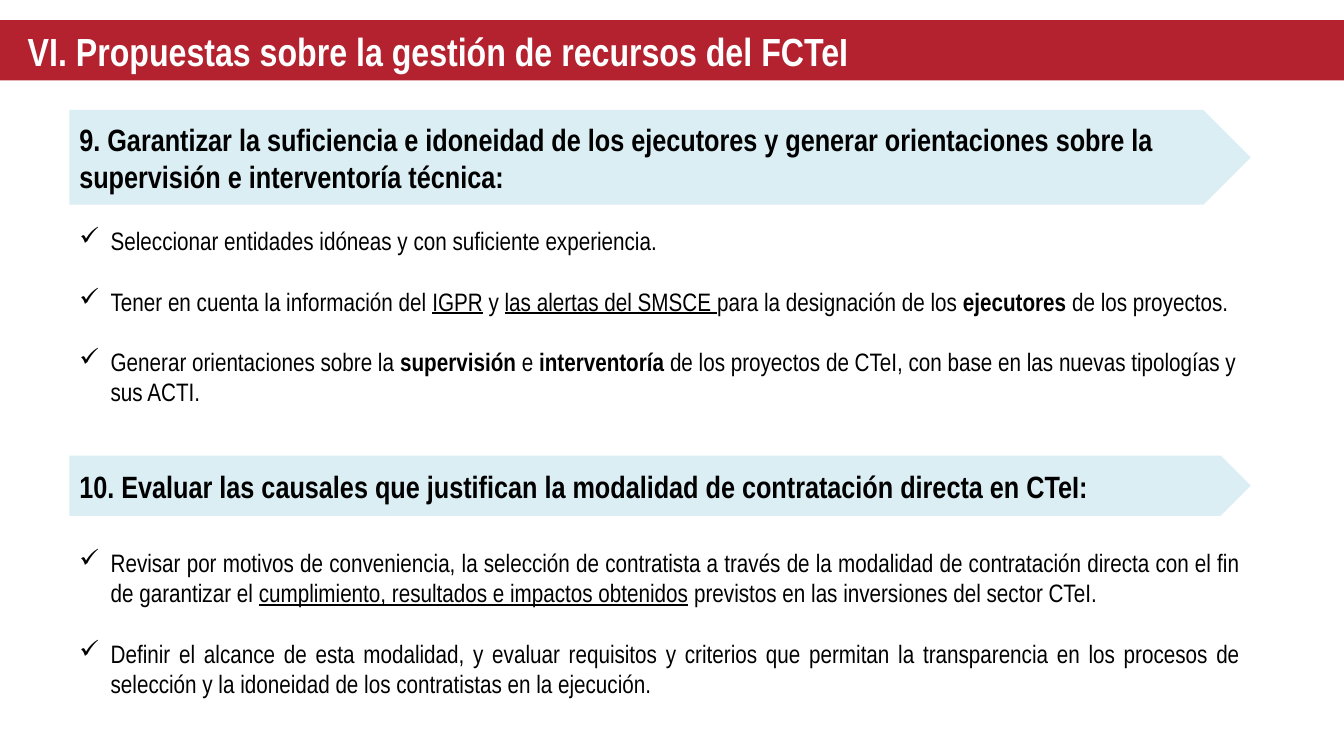
from dataclasses import dataclass

from lxml import etree
from pptx import Presentation
from pptx import util as u
from pptx.dml.color import RGBColor
from pptx.enum import shapes, text
from pptx.oxml import ns


@dataclass(frozen=True)
class Theme:
    """Colours, type sizes and shared measures of the slide."""
    font: str = "Arial Narrow"
    red: str = "B4222F"
    pale_blue: str = "DBEEF4"
    black: str = "000000"
    white: str = "FFFFFF"
    title_size: float = 28
    heading_size: float = 22
    body_size: float = 18
    item_gap: float = 21.6
    left: float = 1.75
    width: float = 29.77
    inset: float = 0.25
    indent: float = 0.79


class ProposalSlide:
    """Draws the elements of a proposals slide in one style."""

    def __init__(self, presentation, theme):
        """Add a blank slide to the presentation."""
        self.theme = theme
        self.slide = presentation.slides.add_slide(presentation.slide_layouts[6])

    def style_run(self, run, size, color, bold=False, underline=False):
        """Apply the theme font to a run."""
        run.font.name = self.theme.font
        run.font.size = u.Pt(size)
        run.font.color.rgb = RGBColor.from_string(color)
        run.font.bold = bold
        run.font.underline = underline

    def band(self, kind, box, fill, label, size, color, inset):
        """Draw a filled shape with a bold, left-aligned label."""
        shape = self.slide.shapes.add_shape(kind, *map(u.Cm, box))
        shape.shadow.inherit = False
        shape.fill.solid()
        shape.fill.fore_color.rgb = RGBColor.from_string(fill)
        shape.line.fill.background()
        frame = shape.text_frame
        frame.word_wrap = True
        frame.margin_left = u.Cm(inset)
        frame.vertical_anchor = text.MSO_ANCHOR.MIDDLE
        frame.text = label
        paragraph = frame.paragraphs[0]
        paragraph.alignment = text.PP_ALIGN.LEFT
        self.style_run(paragraph.runs[0], size, color, bold=True)

    def title(self, label):
        """Draw the full-width title band."""
        theme = self.theme
        self.band(shapes.MSO_SHAPE.RECTANGLE, (0, 0.51, 33.87, 1.52), theme.red,
                  label, theme.title_size, theme.white, 0.7)

    def heading(self, top, height, label):
        """Draw a proposal heading in an arrow-shaped band."""
        theme = self.theme
        self.band(shapes.MSO_SHAPE.PENTAGON, (theme.left, top, theme.width, height),
                  theme.pale_blue, label, theme.heading_size, theme.black, theme.inset)

    def check_mark(self, paragraph):
        """Give a paragraph a hanging check mark."""
        properties = paragraph._p.get_or_add_pPr()
        indent = u.Cm(self.theme.indent)
        properties.set("marL", str(indent))
        properties.set("indent", str(-indent))
        etree.SubElement(properties, ns.qn("a:buChar")).set("char", "✓")

    def checklist(self, top, height, items, alignment):
        """Write items whose runs are pairs of text and emphasis."""
        theme = self.theme
        box = map(u.Cm, (theme.left, top, theme.width, height))
        frame = self.slide.shapes.add_textbox(*box).text_frame
        frame.word_wrap = True
        frame.auto_size = text.MSO_AUTO_SIZE.SHAPE_TO_FIT_TEXT
        for index, item in enumerate(items):
            paragraph = frame.add_paragraph() if index else frame.paragraphs[0]
            paragraph.alignment = alignment
            paragraph.space_before = u.Pt(theme.item_gap if index else 0)
            self.check_mark(paragraph)
            for words, emphasis in item:
                run = paragraph.add_run()
                run.text = words
                self.style_run(run, theme.body_size, theme.black,
                               bold=emphasis == "bold", underline=emphasis == "underline")


EXECUTORS = [
    [("Seleccionar entidades idóneas y con suficiente experiencia.", "")],
    [("Tener en cuenta la información del ", ""), ("IGPR", "underline"), (" y ", ""),
     ("las alertas del SMSCE ", "underline"), ("para la designación de los ", ""),
     ("ejecutores", "bold"), (" de los proyectos.", "")],
    [("Generar orientaciones sobre la ", ""), ("supervisión", "bold"), (" e ", ""),
     ("interventoría ", "bold"),
     ("de los proyectos de CTeI, con base en las nuevas tipologías y sus ACTI.", "")],
]
CONTRACTING = [
    [("Revisar por motivos de conveniencia, la selección de contratista a través de la "
      "modalidad de contratación directa con el fin de garantizar el ", ""),
     ("cumplimiento, resultados e impactos obtenidos", "underline"),
     (" previstos en las inversiones del sector CTeI.", "")],
    [("Definir el alcance de esta modalidad, y evaluar requisitos y criterios que permitan la "
      "transparencia en los procesos de selección y la idoneidad de los contratistas en la "
      "ejecución.", "")],
]


def main():
    """Build and save the presentation."""
    presentation = Presentation()
    presentation.slide_width = u.Cm(33.87)
    presentation.slide_height = u.Cm(19.05)
    slide = ProposalSlide(presentation, Theme())
    slide.title("VI. Propuestas sobre la gestión de recursos del FCTeI")
    slide.heading(2.77, 2.39, "9. Garantizar la suficiencia e idoneidad de los ejecutores y generar "
                  "orientaciones sobre la supervisión e interventoría técnica:")
    slide.checklist(5.56, 4.88, EXECUTORS, text.PP_ALIGN.LEFT)
    slide.heading(11.48, 1.52, "10. Evaluar las causales que justifican la modalidad de "
                  "contratación directa en CTeI:")
    slide.checklist(13.67, 4.11, CONTRACTING, text.PP_ALIGN.JUSTIFY)
    presentation.save("out.pptx")


if __name__ == "__main__":
    main()
